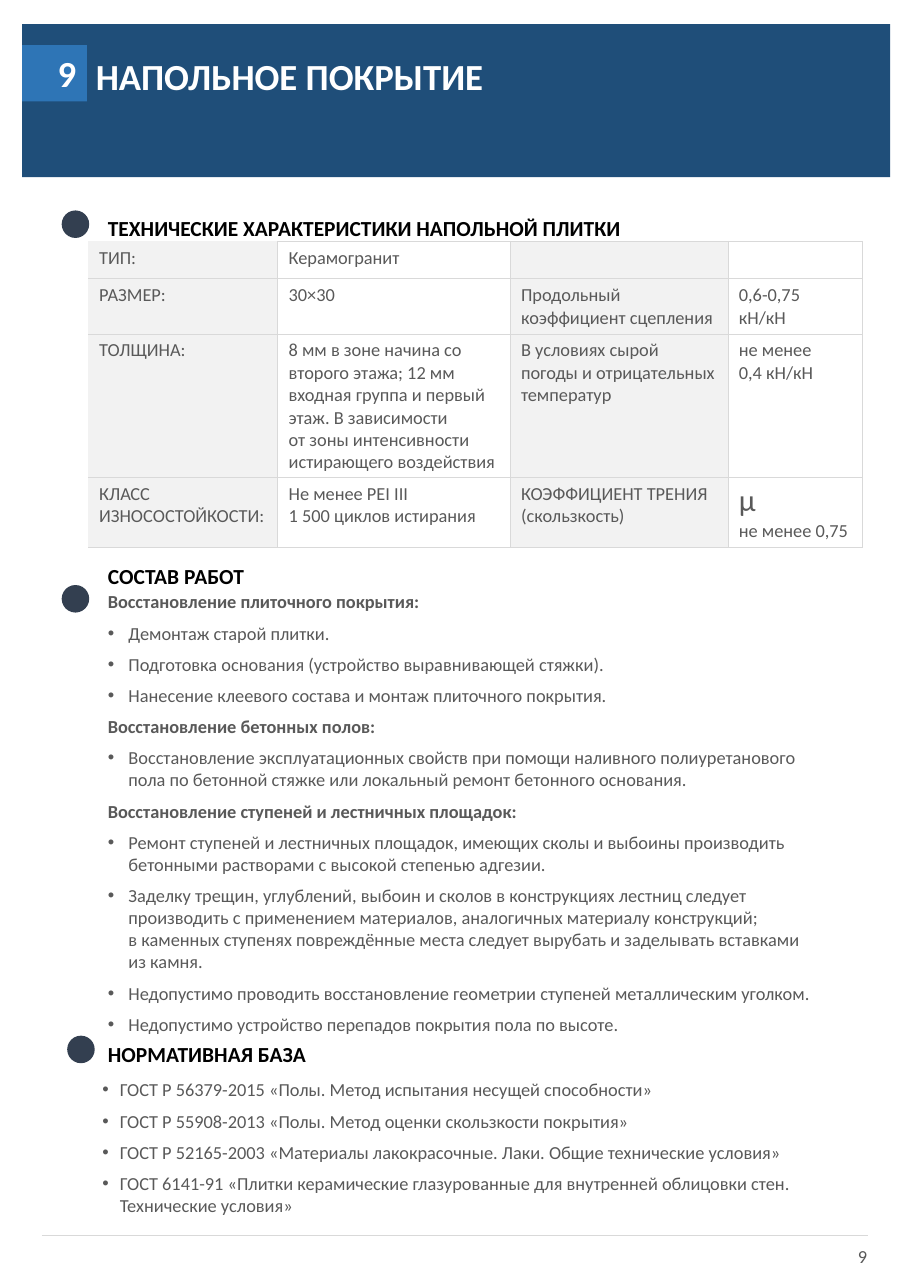
from lxml.etree import SubElement
from pptx import Presentation
from pptx.dml.color import RGBColor
from pptx.enum.shapes import MSO_CONNECTOR, MSO_SHAPE
from pptx.enum.text import MSO_ANCHOR, MSO_AUTO_SIZE, PP_ALIGN
from pptx.oxml.ns import qn
from pptx.util import Pt

# Content
TITLE = "НАПОЛЬНОЕ ПОКРЫТИЕ"
NUMBER = "9"
# heading, left, top, width, fill, dot left, dot top
HEADS = [
    ("ТЕХНИЧЕСКИЕ ХАРАКТЕРИСТИКИ НАПОЛЬНОЙ ПЛИТКИ",
     63.4, 136.8, 384, "FFFFFF", 40.3, 137.5),
    ("СОСТАВ РАБОТ", 63.4, 364.3, 284.4, None, 40.3, 382.3),
    ("НОРМАТИВНАЯ БАЗА", 63.4, 676.8, 284.4, "FFFFFF", 43.9, 676.8),
]
SPECS = [
    ["ТИП:", "Керамогранит", "", ""],
    ["РАЗМЕР:", "30×30", "Продольный коэффициент сцепления",
     "0,6-0,75 кН/кН"],
    ["ТОЛЩИНА:",
     "8 мм в зоне начина со второго этажа; 12 мм входная группа и первый "
     "этаж. В зависимости\nот зоны интенсивности истирающего воздействия",
     "В условиях сырой погоды и отрицательных температур",
     "не менее\n0,4 кН/кН"],
    ["КЛАСС ИЗНОСОСТОЙКОСТИ:",
     ["Не менее PEI III", "1 500 циклов истирания"],
     "КОЭФФИЦИЕНТ ТРЕНИЯ (скользкость)", "μ\nне менее 0,75"],
]
COLS = [123.9, 151.9, 142.4, 87.9]
ROWS = [24.5, 36, 93.3, 46]
WORKS = [
    ("Восстановление плиточного покрытия:", [
        "Демонтаж старой плитки.",
        "Подготовка основания (устройство выравнивающей стяжки).",
        "Нанесение клеевого состава и монтаж плиточного покрытия."]),
    ("Восстановление бетонных полов:", [
        "Восстановление эксплуатационных свойств при помощи наливного "
        "полиуретанового пола по бетонной стяжке или локальный ремонт "
        "бетонного основания."]),
    ("Восстановление ступеней и лестничных площадок:", [
        "Ремонт ступеней и лестничных площадок, имеющих сколы и выбоины "
        "производить бетонными растворами с высокой степенью адгезии.",
        "Заделку трещин, углублений, выбоин и сколов в конструкциях лестниц "
        "следует производить с применением материалов, аналогичных материалу "
        "конструкций;\nв каменных ступенях повреждённые места следует "
        "вырубать и заделывать вставками из камня.",
        "Недопустимо проводить восстановление геометрии ступеней "
        "металлическим уголком.",
        "Недопустимо устройство перепадов покрытия пола по высоте."]),
]
NORMS = [
    "ГОСТ Р 56379-2015 «Полы. Метод испытания несущей способности»",
    "ГОСТ Р 55908-2013 «Полы. Метод оценки скользкости покрытия»",
    "ГОСТ Р 52165-2003 «Материалы лакокрасочные. Лаки. Общие технические "
    "условия»",
    "ГОСТ 6141-91 «Плитки керамические глазурованные для внутренней "
    "облицовки стен. Технические условия»",
]
GREY, RULE, PALE = "595959", "D9D9D9", "F2F2F2"


def paint(part, color):
    """Colour a fill or a font with a hex string."""
    if hasattr(part, "solid"):
        part.solid()
        part = part.fore_color
    else:
        part = part.color
    part.rgb = RGBColor.from_string(color)


def write(frame, text, size=12, color=GREY, bold=False, align=PP_ALIGN.LEFT,
          line=None, before=0, after=0, hang=0, lead=None, more=False):
    """Add one paragraph; lead sizes its first line, hang adds a bullet."""
    para = frame.add_paragraph() if more else frame.paragraphs[0]
    para.alignment = align
    para.space_before, para.space_after = Pt(before), Pt(after)
    if line:
        para.line_spacing = Pt(line)
    for i, row in enumerate(text.split("\n") if text else []):
        if i:
            para.add_line_break()
        run = para.add_run()
        run.text = row
        font = run.font
        font.name, font.bold = "Calibri", bold
        font.size = Pt(lead if lead and i == 0 else size)
        paint(font, color)
    for br in para._p.findall(qn("a:br")):
        SubElement(br, qn("a:rPr"), sz=str(size * 100))
    if not text:
        SubElement(para._p, qn("a:endParaRPr"), sz=str(size * 100))
    if hang:
        props = para._p.get_or_add_pPr()
        props.set("marL", str(Pt(hang)))
        props.set("indent", str(-Pt(hang)))
        SubElement(props, qn("a:buFont"), typeface="Arial")
        SubElement(props, qn("a:buChar"), char="•")


def shape(kind, x, y, w, h, color):
    item = page.shapes.add_shape(kind, Pt(x), Pt(y), Pt(w), Pt(h))
    item.shadow.inherit = False
    item.line.fill.background()
    paint(item.fill, color)
    return item


def box(x, y, w, h, fill=None):
    if fill:
        item = shape(MSO_SHAPE.RECTANGLE, x, y, w, h, fill)
    else:
        item = page.shapes.add_textbox(Pt(x), Pt(y), Pt(w), Pt(h))
    frame = item.text_frame
    frame.word_wrap = True
    frame.vertical_anchor = MSO_ANCHOR.TOP
    return frame


def edge(cell, hidden):
    """Rule the sides of a cell, except the hidden ones."""
    props = cell._tc.get_or_add_tcPr()
    for side in "LRTB":
        ln = SubElement(props, qn("a:ln" + side), w=str(Pt(0.5)))
        if side in hidden:
            SubElement(ln, qn("a:noFill"))
        else:
            fill = SubElement(ln, qn("a:solidFill"))
            SubElement(fill, qn("a:srgbClr"), val=RULE)


deck = Presentation()
deck.slide_width, deck.slide_height = Pt(595.44), Pt(841.68)
page = deck.slides.add_slide(deck.slide_layouts[5])

# Banner, title and section number
shape(MSO_SHAPE.RECTANGLE, 14.4, 15.8, 567.4, 100, "1F4E79")
title = page.shapes.title
page.shapes.element.append(title.element)
title.left, title.top, title.width, title.height = (
    Pt(55.4), Pt(31), Pt(396), Pt(35.5))
head = title.text_frame
head.auto_size = MSO_AUTO_SIZE.NONE
head.vertical_anchor = MSO_ANCHOR.TOP
write(head, TITLE, size=24, color="FFFFFF", bold=True, line=29)
badge = box(14.4, 29.5, 42.5, 36.7, "2E75B6")
write(badge, NUMBER, size=24, color="FFFFFF", bold=True, line=29,
      align=PP_ALIGN.RIGHT)

# Section headings with their dots
for text, x, y, w, fill, dx, dy in HEADS:
    write(box(x, y, w, 24.5, fill), text, size=14, color="000000", bold=True)
    shape(MSO_SHAPE.OVAL, dx, dy, 18, 18, "333F50")

# Table of tile properties
grid = page.shapes.add_table(len(ROWS), len(COLS), Pt(57.6), Pt(157.7),
                             Pt(sum(COLS)), Pt(sum(ROWS))).table
grid.first_row = grid.horz_banding = False
for col, w in zip(grid.columns, COLS):
    col.width = Pt(w)
for r, (row, h) in enumerate(zip(SPECS, ROWS)):
    grid.rows[r].height = Pt(h)
    for c, text in enumerate(row):
        cell = grid.cell(r, c)
        edge(cell, "" if c else "L" if r else "LT")
        if c % 2:
            cell.fill.background()
        else:
            paint(cell.fill, PALE)
        for i, part in enumerate([text] if isinstance(text, str) else text):
            write(cell.text_frame, part, more=i > 0,
                  lead=20 if part.startswith("μ") else None)

# Scope of work
body = box(63.4, 382.3, 475.2, 300)
for i, (name, items) in enumerate(WORKS):
    write(body, name, bold=True, before=6, more=i > 0)
    for text in items:
        write(body, text, before=6, hang=13.5, more=True)

# Standards
base = box(59.8, 701.3, 475.2, 98)
for i, text in enumerate(NORMS):
    write(base, text, before=6, hang=11.5, more=i > 0)

# Footer
rule = page.shapes.add_connector(MSO_CONNECTOR.STRAIGHT, Pt(27.4), Pt(807),
                                 Pt(567.4), Pt(807))
rule.line.width = Pt(0.5)
paint(rule.line.fill, RULE)
SubElement(rule.element.spPr, qn("a:effectLst"))
write(box(538.6, 810, 35.3, 22.3), NUMBER, align=PP_ALIGN.RIGHT, after=6)

deck.save("out.pptx")
